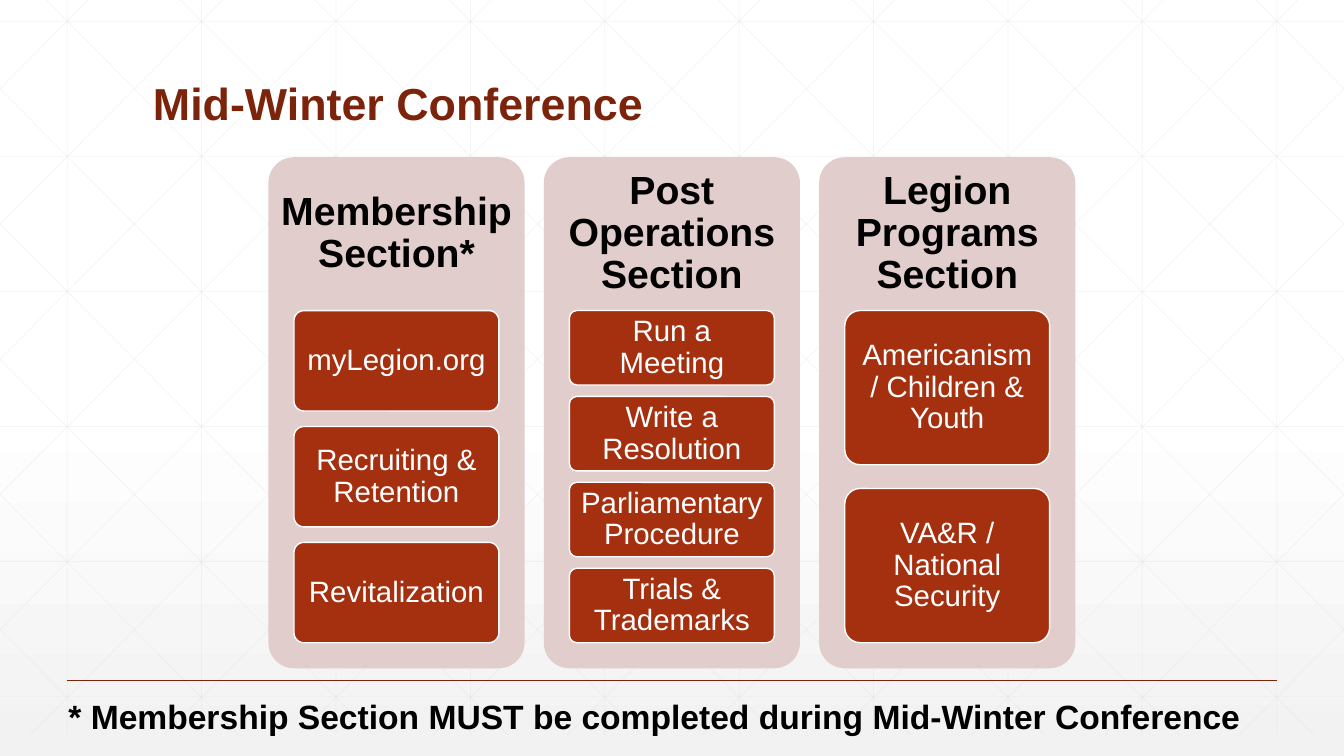
import pptx
import pptx.util
import pptx.dml.color
import pptx.enum.dml
import pptx.enum.shapes
import pptx.enum.text
import pptx.oxml
import pptx.oxml.ns
import lxml.etree

RGBColor = pptx.dml.color.RGBColor
Anchor = pptx.enum.text.MSO_ANCHOR
Align = pptx.enum.text.PP_ALIGN

WHITE = RGBColor(0xFF, 0xFF, 0xFF)
BLACK = RGBColor(0x00, 0x00, 0x00)
PALE_GREY = RGBColor(0xF2, 0xF2, 0xF2)
GRID_GREY = RGBColor(0xD9, 0xD9, 0xD9)
MAROON = RGBColor(0x7C, 0x24, 0x0B)
BRICK = RGBColor(0xA5, 0x30, 0x0F)
PINK = RGBColor(0xE1, 0xCD, 0xCC)

SECTIONS = [
    ("Membership Section*",
     ["myLegion.org", "Recruiting & Retention", "Revitalization"]),
    ("Post Operations Section",
     ["Run a Meeting", "Write a Resolution", "Parliamentary Procedure",
      "Trials & Trademarks"]),
    ("Legion Programs Section",
     ["Americanism / Children & Youth", "VA&R / National Security"]),
]


def write(sp, text, size=21, color=BLACK, bold=False, align=Align.CENTER,
          anchor=Anchor.MIDDLE, spacing=0.9, insets=(0.1, 0.05, 0.1, 0.05),
          wrap=True):
    """Fill a shape with one paragraph; insets are inches: left, top, right, bottom."""
    tf = sp.text_frame
    tf.word_wrap = wrap
    tf.auto_size = pptx.enum.text.MSO_AUTO_SIZE.NONE
    tf.vertical_anchor = anchor
    (tf.margin_left, tf.margin_top,
     tf.margin_right, tf.margin_bottom) = map(pptx.util.Inches, insets)
    p = tf.paragraphs[0]
    p.alignment = align
    p.line_spacing = spacing
    r = p.add_run()
    r.text = text
    r.font.name = "Arial"
    r.font.size = pptx.util.Pt(size)
    r.font.bold = bold
    r.font.color.rgb = color


class Deck:
    """Holds the slide; all lengths are on a grid of 100 columns by 100 rows."""

    def __init__(self):
        self.prs = pptx.Presentation()
        self.prs.slide_width = pptx.util.Inches(13.333)
        self.prs.slide_height = pptx.util.Inches(7.5)
        self.s = self.prs.slides.add_slide(self.prs.slide_layouts[5])

    def x(self, columns):
        return round(self.prs.slide_width * columns / 100)

    def y(self, rows):
        return round(self.prs.slide_height * rows / 100)

    def box(self, left, top, width, height):
        return self.x(left), self.y(top), self.x(width), self.y(height)

    def background(self):
        fill = self.s.background.fill
        fill.gradient()
        fill.gradient_angle = 270
        for stop, position, color in zip(fill.gradient_stops, (0.53, 1), (WHITE, PALE_GREY)):
            stop.position = position
            stop.color.rgb = color

    def line(self, x1, y1, x2, y2, color=GRID_GREY, width=0.5, opacity=None):
        cn = self.s.shapes.add_connector(
            pptx.enum.shapes.MSO_CONNECTOR.STRAIGHT,
            self.x(x1), self.y(y1), self.x(x2), self.y(y2))
        cn.line.color.rgb = color
        cn.line.width = pptx.util.Pt(width)
        qn = pptx.oxml.ns.qn
        if opacity is not None:
            srgb = cn.element.spPr.find(".//" + qn("a:srgbClr"))
            lxml.etree.SubElement(srgb, qn("a:alpha")).set("val", str(opacity * 1000))
        lxml.etree.SubElement(cn.element.spPr, qn("a:effectLst"))

    def lattice(self):
        """Draw faint verticals, horizontals and crossing diagonals cut at the slide's sides."""
        top, bottom, run = -2.8, 97.2, 55.9
        for i in range(10):
            self.line(5 + 10 * i, top, 5 + 10 * i, bottom, opacity=25)
        for i in range(6):
            y = 2.8 + 17.87 * i
            self.line(0, y, 100, y, opacity=25)
        slope = (bottom - top) / run
        for i in range(-5, 10):
            start = 1.87 + 10 * i
            x1, x2 = max(start, 0), min(start + run, 100)
            y1, y2 = (top + (x - start) * slope for x in (x1, x2))
            self.line(x1, y1, x2, y2, opacity=25)
            self.line(100 - x1, y1, 100 - x2, y2, opacity=25)

    def title(self, text, *place):
        sp = self.s.shapes.title
        sp.left, sp.top, sp.width, sp.height = self.box(*place)
        write(sp, text, size=32, color=MAROON, bold=True, align=Align.LEFT,
              anchor=Anchor.BOTTOM, insets=(0.1, 0.05, 0.1, 0.51))
        sp.element.getparent().append(sp.element)

    def text(self, text, *place, **style):
        sp = self.s.shapes.add_textbox(*self.box(*place))
        write(sp, text, **style)

    def card(self, *place, fill, outline=None):
        sp = self.s.shapes.add_shape(
            pptx.enum.shapes.MSO_SHAPE.ROUNDED_RECTANGLE, *self.box(*place))
        sp.adjustments[0] = 0.1
        sp.shadow.inherit = False
        sp.fill.solid()
        sp.fill.fore_color.rgb = fill
        if outline is None:
            sp.line.fill.background()
        else:
            sp.line.color.rgb = outline
            sp.line.width = pptx.util.Pt(1)
        return sp

    def section(self, left, heading, topics):
        """Draw a panel: heading in the top 30 %, topics sharing the next 65 %."""
        top, width, height = 20.8, 19.06, 67.6
        self.card(left, top, width, height, fill=PINK)
        self.text(heading, left, top, width, 0.3 * height, size=28, bold=True,
                  insets=(0.12,) * 4)
        gap_ratio = 2 / 13
        n = len(topics)
        topic_height = 0.65 * height / (n + gap_ratio * (n - 1))
        for i, topic in enumerate(topics):
            topic_top = top + 0.3 * height + i * topic_height * (1 + gap_ratio)
            sp = self.card(left + 0.1 * width, topic_top, 0.8 * width, topic_height,
                           fill=BRICK, outline=WHITE)
            write(sp, topic, color=WHITE, insets=(0.06, 0.04, 0.06, 0.04))


def main():
    deck = Deck()
    deck.background()
    deck.lattice()
    deck.line(5, 90, 95, 90, color=MAROON, width=1)
    for i, (heading, topics) in enumerate(SECTIONS):
        deck.section(19.97 + 20.49 * i, heading, topics)
    deck.title("Mid-Winter Conference", 10.63, 7.33, 78.75, 16.67)
    deck.text("* Membership Section MUST be completed during Mid-Winter Conference",
              4.35, 91.33, 89.55, 6.67, size=24, bold=True, align=Align.LEFT,
              anchor=Anchor.TOP, spacing=1.0, wrap=False)
    deck.prs.save("out.pptx")


if __name__ == "__main__":
    main()
